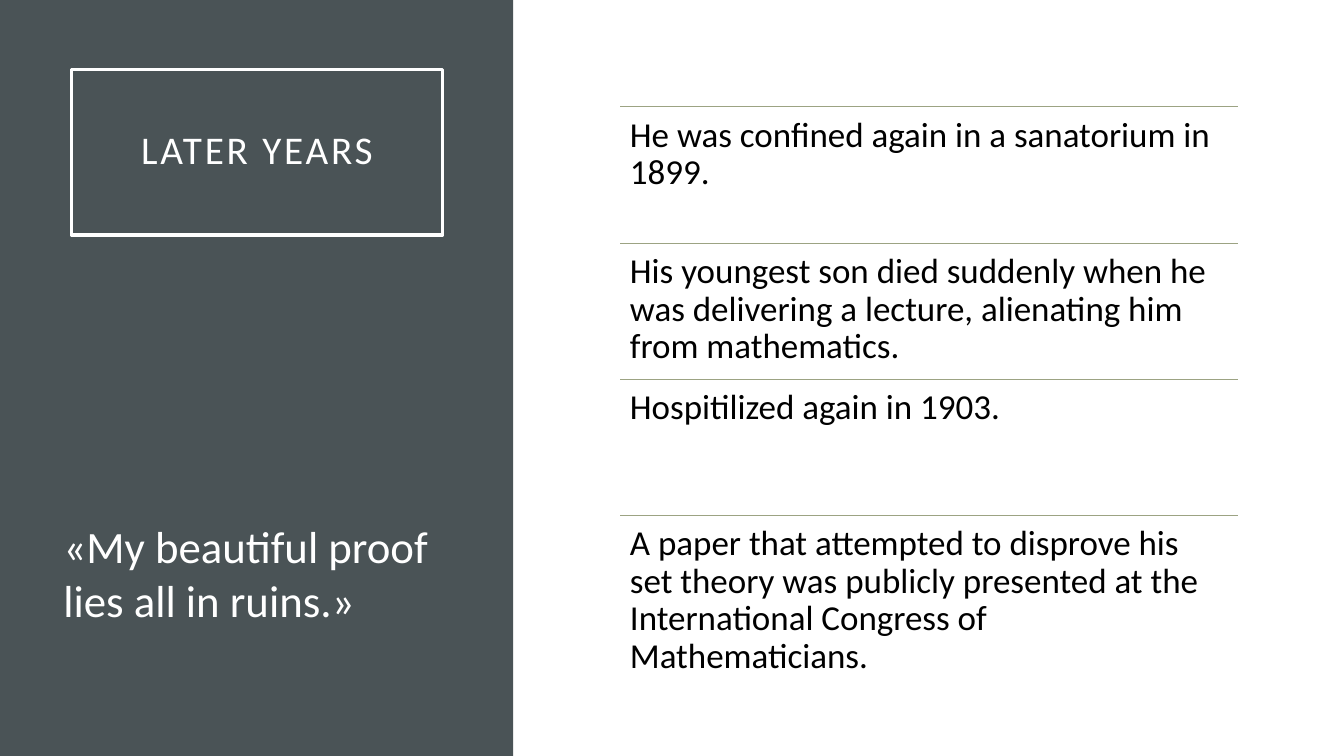
from dataclasses import dataclass
from pptx import Presentation
from pptx.dml.color import RGBColor as Rgb
from pptx.enum.shapes import MSO_CONNECTOR as Conn, MSO_SHAPE as Shape
from pptx.enum.text import MSO_ANCHOR as Anchor, MSO_AUTO_SIZE as Fit, PP_ALIGN as Align
from pptx.oxml.ns import qn
from pptx.util import Inches, Pt
from lxml import etree


@dataclass(frozen=True)
class Theme:
    """Colours, font and type sizes of the slide."""
    slate: Rgb = Rgb(0x4A, 0x53, 0x56)
    sage: Rgb = Rgb(0x9C, 0xA3, 0x83)
    white: Rgb = Rgb(0xFF, 0xFF, 0xFF)
    black: Rgb = Rgb(0, 0, 0)
    font: str = "Calibri"
    head: int = 28
    body: int = 25
    quote: int = 32


THEME = Theme()
LEFT, TOP, WIDTH, STEP = 6.15, 1.06, 6.13, 1.35
EVENTS = [
    "He was confined again in a sanatorium in 1899.",
    "His youngest son died suddenly when he was delivering a lecture, "
    "alienating him from mathematics.",
    "Hospitilized again in 1903.",
    "A paper that attempted to disprove his set theory was publicly presented "
    "at the International Congress of Mathematicians.",
]


def write(shape, text, size, color, align=Align.LEFT, anchor=Anchor.TOP,
          inset=None, leading=None, track=None):
    """Put formatted text in a shape."""
    frame = shape.text_frame
    frame.word_wrap = True
    frame.auto_size = Fit.NONE
    frame.vertical_anchor = anchor
    if inset is not None:
        frame.margin_left = frame.margin_right = Inches(inset)
        frame.margin_top = frame.margin_bottom = Inches(inset)
    para = frame.paragraphs[0]
    para.alignment = align
    para.line_spacing = leading
    run = para.add_run()
    run.text = text
    run.font.name = THEME.font
    run.font.size = Pt(size)
    run.font.color.rgb = color
    if track:
        run.font._element.set("spc", str(track * 100))


def add_text(slide, box, text, **style):
    """Add a text box."""
    write(slide.shapes.add_textbox(*map(Inches, box)), text, **style)


def add_title(slide, box, text):
    """Place and frame the title."""
    title = slide.shapes.title
    title.left, title.top, title.width, title.height = map(Inches, box)
    title.line.color.rgb = THEME.white
    title.line.width = Pt(2.5)
    write(title, text, THEME.head, THEME.white, align=Align.CENTER,
          anchor=Anchor.MIDDLE, inset=0.2, leading=0.9, track=2)


def add_panel(slide, box):
    """Add the dark side panel behind the title."""
    panel = slide.shapes.add_shape(Shape.RECTANGLE, *map(Inches, box))
    panel.shadow.inherit = False
    panel.fill.solid()
    panel.fill.fore_color.rgb = THEME.slate
    panel.line.fill.background()
    slide.shapes.title.element.addprevious(panel.element)


def add_rule(slide, left, top, width):
    """Add a thin level line."""
    rule = slide.shapes.add_connector(
        Conn.STRAIGHT, *map(Inches, (left, top, left + width, top)))
    rule.line.color.rgb = THEME.sage
    rule.line.width = Pt(0.5)
    etree.SubElement(rule.element.spPr, qn("a:effectLst"))


def main():
    """Build and save the slide."""
    deck = Presentation()
    deck.slide_width, deck.slide_height = Inches(13.33), Inches(7.5)
    slide = deck.slides.add_slide(deck.slide_layouts[5])
    add_panel(slide, (0, 0, 5.09, 7.5))
    add_title(slide, (0.71, 0.69, 3.68, 1.64), "LATER YEARS")
    for row, event in enumerate(EVENTS):
        top = TOP + row * STEP
        add_rule(slide, LEFT, top, WIDTH)
        add_text(slide, (LEFT, top, WIDTH, STEP), event, size=THEME.body,
                 color=THEME.black, inset=0.1, leading=0.9)
    add_text(slide, (0.53, 5.1, 4.02, 1.72), "«My beautiful proof lies all in ruins.»",
             size=THEME.quote, color=THEME.white)
    deck.save("out.pptx")


if __name__ == "__main__":
    main()
